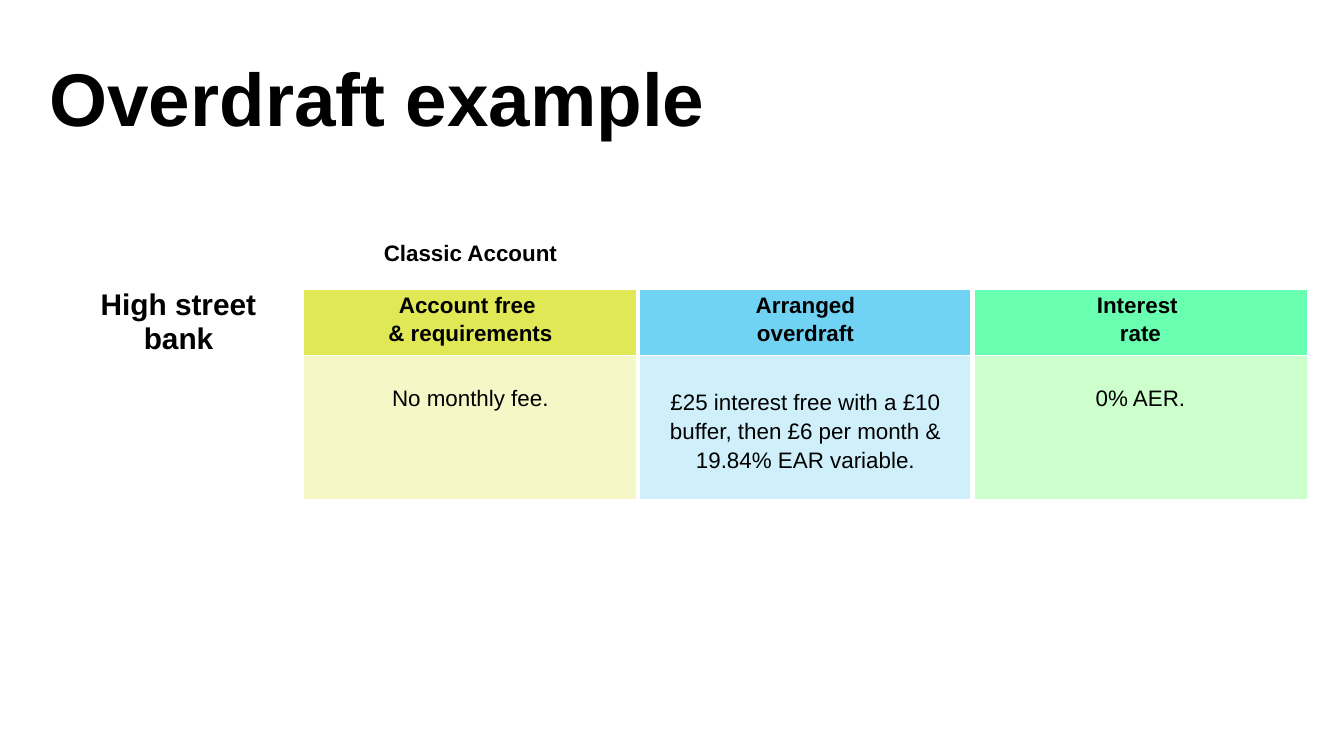
from dataclasses import dataclass

import lxml.etree
import pptx
import pptx.dml.color
import pptx.enum.text
import pptx.oxml.ns
import pptx.table
import pptx.text.text
import pptx.util

EMU_PER_PX = 914400 / 134.4
FONT = "Arial"
COLOURS = {
    "text": "000000",
    "border": "FFFFFF",
    "fee": "E0E856",
    "fee_light": "F5F7C7",
    "overdraft": "70D3F3",
    "overdraft_light": "CFF0FB",
    "rate": "68FFB0",
    "rate_light": "CCFFCC",
}
COLUMN_WIDTHS = [249, 335, 335, 335]
ROW_HEIGHTS = [52, 66, 144]
SIDE_MARGIN = 9


@dataclass
class CellContent:
    row: int
    column: int
    text: str
    fill: str = ""
    size: int = 12
    bold: bool = True
    line_spacing: float = 1.15
    top: int = 0


CONTENTS = [
    CellContent(0, 1, "Classic Account"),
    CellContent(1, 0, "High street bank", size=16, line_spacing=1.0),
    CellContent(1, 1, "Account free \v& requirements", "fee"),
    CellContent(1, 2, "Arranged\voverdraft", "overdraft"),
    CellContent(1, 3, "Interest \vrate", "rate"),
    CellContent(2, 1, "No monthly fee.", "fee_light", bold=False, top=27),
    CellContent(2, 2, "£25 interest free with a £10 buffer, then £6 per month & 19.84% EAR variable.",
                "overdraft_light", bold=False, top=31),
    CellContent(2, 3, "0% AER.", "rate_light", bold=False, top=27),
]


def px(length: int) -> pptx.util.Emu:
    return pptx.util.Emu(round(length * EMU_PER_PX))


def colour(name: str) -> pptx.dml.color.RGBColor:
    return pptx.dml.color.RGBColor.from_string(COLOURS[name])


def write_text(frame: pptx.text.text.TextFrame, text: str, *, size: int, bold: bool = True,
               align=pptx.enum.text.PP_ALIGN.CENTER, line_spacing=1.0) -> None:
    frame.text = text
    frame.word_wrap = True
    paragraph = frame.paragraphs[0]
    paragraph.alignment = align
    paragraph.line_spacing = line_spacing
    for run in paragraph.runs:
        run.font.name = FONT
        run.font.size = pptx.util.Pt(size)
        run.font.bold = bold
        run.font.color.rgb = colour("text")


def add_borders(cell: pptx.table._Cell, widths: dict[str, int]) -> None:
    """Draw the sides L, R, T and B at the given widths in points, ahead of the fill."""
    properties = cell._tc.get_or_add_tcPr()
    for position, (side, width) in enumerate(widths.items()):
        line = lxml.etree.Element(pptx.oxml.ns.qn(f"a:ln{side}"), w=str(pptx.util.Pt(width)))
        solid = lxml.etree.SubElement(line, pptx.oxml.ns.qn("a:solidFill"))
        lxml.etree.SubElement(solid, pptx.oxml.ns.qn("a:srgbClr"), val=COLOURS["border"])
        properties.insert(position, line)


def fill_cell(cell: pptx.table._Cell, content: CellContent) -> None:
    cell.margin_top = px(content.top)
    write_text(cell.text_frame, content.text, size=content.size, bold=content.bold,
               line_spacing=content.line_spacing)
    if content.fill:
        cell.fill.solid()
        cell.fill.fore_color.rgb = colour(content.fill)


def add_account_table(slide) -> None:
    table = slide.shapes.add_table(len(ROW_HEIGHTS), len(COLUMN_WIDTHS), px(54), px(237),
                                   px(sum(COLUMN_WIDTHS)), px(sum(ROW_HEIGHTS))).table
    table.first_row = False
    table.horz_banding = False
    for column, width in zip(table.columns, COLUMN_WIDTHS):
        column.width = px(width)
    for row, height in zip(table.rows, ROW_HEIGHTS):
        row.height = px(height)
        for index, cell in enumerate(row.cells):
            cell.margin_left = cell.margin_right = px(SIDE_MARGIN)
            cell.margin_top = cell.margin_bottom = 0
            cell.fill.background()
            add_borders(cell, {"L": 3 if index > 1 else 1, "R": 3 if index in (1, 2) else 1,
                               "T": 1, "B": 1})
    for content in CONTENTS:
        fill_cell(table.cell(content.row, content.column), content)


def add_title(slide) -> None:
    title = slide.shapes.title
    title.left, title.top, title.width, title.height = px(36), px(32), px(964), px(109)
    frame = title.text_frame
    write_text(frame, "Overdraft example", size=40, align=pptx.enum.text.PP_ALIGN.LEFT,
               line_spacing=pptx.util.Pt(54))
    frame.auto_size = pptx.enum.text.MSO_AUTO_SIZE.NONE
    frame.vertical_anchor = pptx.enum.text.MSO_ANCHOR.BOTTOM
    frame.margin_top = frame.margin_bottom = 0


def main() -> None:
    presentation = pptx.Presentation()
    presentation.slide_width, presentation.slide_height = px(1344), px(756)
    slide = presentation.slides.add_slide(presentation.slide_layouts[5])
    add_title(slide)
    add_account_table(slide)
    presentation.save("out.pptx")


if __name__ == "__main__":
    main()
